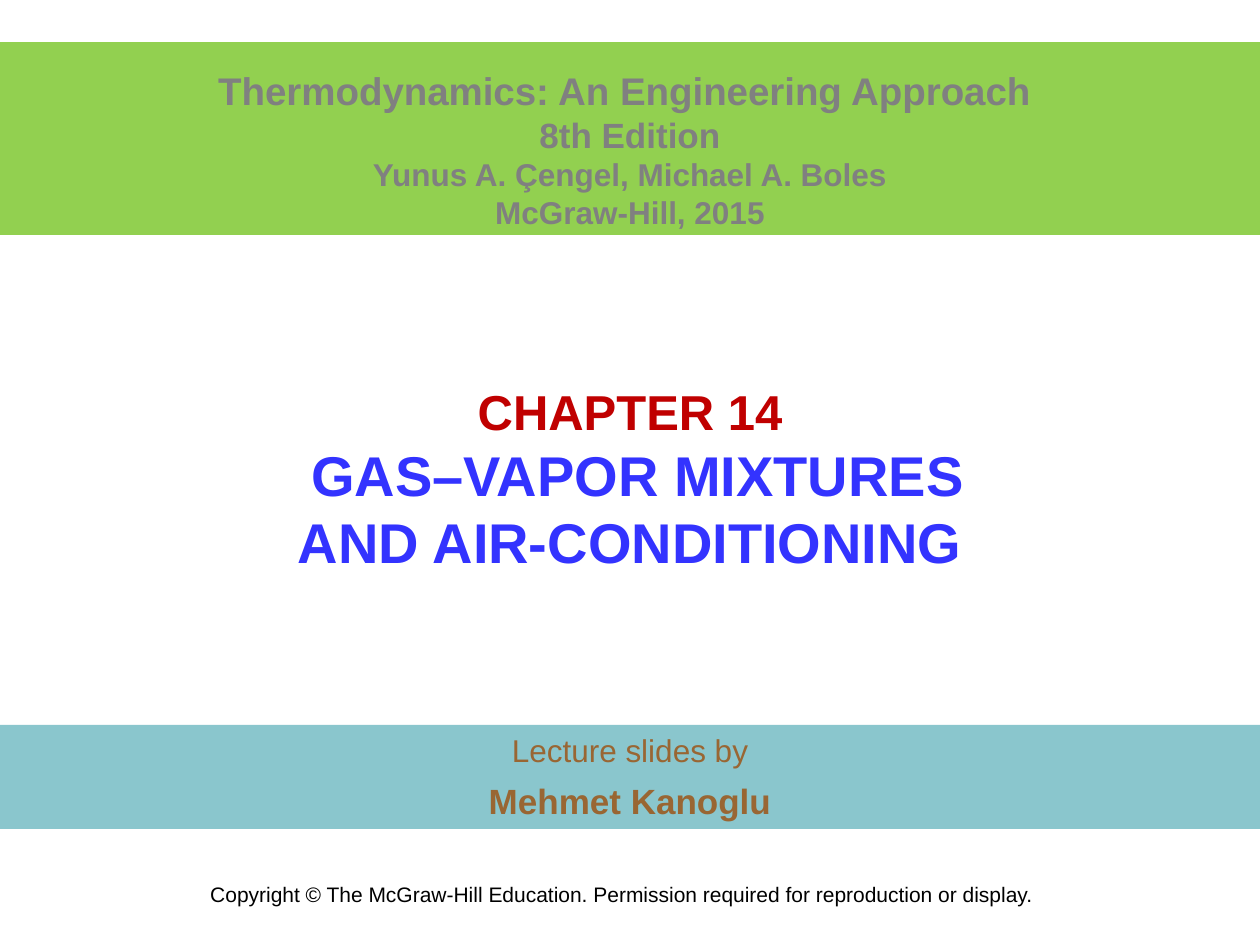
from dataclasses import dataclass

from pptx import Presentation
from pptx.dml.color import RGBColor
from pptx.enum.shapes import MSO_SHAPE as Preset
from pptx.enum.text import MSO_ANCHOR as Anchor, PP_ALIGN as Align
from pptx.util import Emu, Pt

PX = 914400 // 126
COLORS = {
    "green": "92D050", "teal": "8AC6CD", "gray": "808080", "red": "C00000",
    "blue": "3333FF", "brown": "996633", "black": "000000",
}


@dataclass(frozen=True)
class Line:
    text: str
    size: int
    color: str
    bold: bool = True
    before: int = 0
    after: int = 0


@dataclass(frozen=True)
class Block:
    left: int
    top: int
    width: int
    height: int
    lines: tuple[Line, ...]
    fill: str | None = None
    anchor: Anchor = Anchor.TOP
    inset: int = 6
    wrap: bool = True


BLOCKS = (
    # Chapter title
    Block(220, 336, 820, 284, (
        Line("CHAPTER 14", 28, "red"),
        Line(" GAS–VAPOR MIXTURES AND AIR-CONDITIONING", 32, "blue"),
    ), anchor=Anchor.MIDDLE),
    # Lecturer band
    Block(0, 725, 1260, 104, (
        Line("Lecture slides by", 18, "brown", bold=False, after=3),
        Line("Mehmet Kanoglu", 20, "brown", before=3, after=3),
    ), fill="teal"),
    # Copyright line
    Block(195, 876, 854, 38, (
        Line("Copyright © The McGraw-Hill Education. Permission required "
             "for reproduction or display.", 12, "black", bold=False),
    ), wrap=False),
    # Book band
    Block(0, 42, 1260, 193, (
        Line("Thermodynamics: An Engineering Approach ", 22, "gray"),
        Line("8th Edition", 20, "gray"),
        Line("Yunus A. Çengel, Michael A. Boles", 18, "gray"),
        Line("McGraw-Hill, 2015", 18, "gray"),
    ), fill="green", inset=25),
)


def color(name: str) -> RGBColor:
    return RGBColor.from_string(COLORS[name])


def draw_block(page, block: Block) -> None:
    place = [Emu(n * PX) for n in (block.left, block.top, block.width, block.height)]
    if block.fill:
        box = page.shapes.add_shape(Preset.RECTANGLE, *place)
        box.shadow.inherit = False
        box.fill.solid()
        box.fill.fore_color.rgb = color(block.fill)
        box.line.fill.background()
    else:
        box = page.shapes.add_textbox(*place)
    frame = box.text_frame
    frame.word_wrap = block.wrap
    frame.vertical_anchor = block.anchor
    frame.margin_top = Emu(block.inset * PX)
    for index, line in enumerate(block.lines):
        para = frame.add_paragraph() if index else frame.paragraphs[0]
        para.text = line.text
        para.alignment = Align.CENTER
        para.space_before = Pt(line.before)
        para.space_after = Pt(line.after)
        para.font.name = "Arial"
        para.font.size = Pt(line.size)
        para.font.bold = line.bold
        para.font.color.rgb = color(line.color)


def main() -> None:
    deck = Presentation()
    deck.slide_width, deck.slide_height = Emu(1260 * PX), Emu(945 * PX)
    page = deck.slides.add_slide(deck.slide_layouts[6])
    for block in BLOCKS:
        draw_block(page, block)
    deck.save("out.pptx")


if __name__ == "__main__":
    main()
